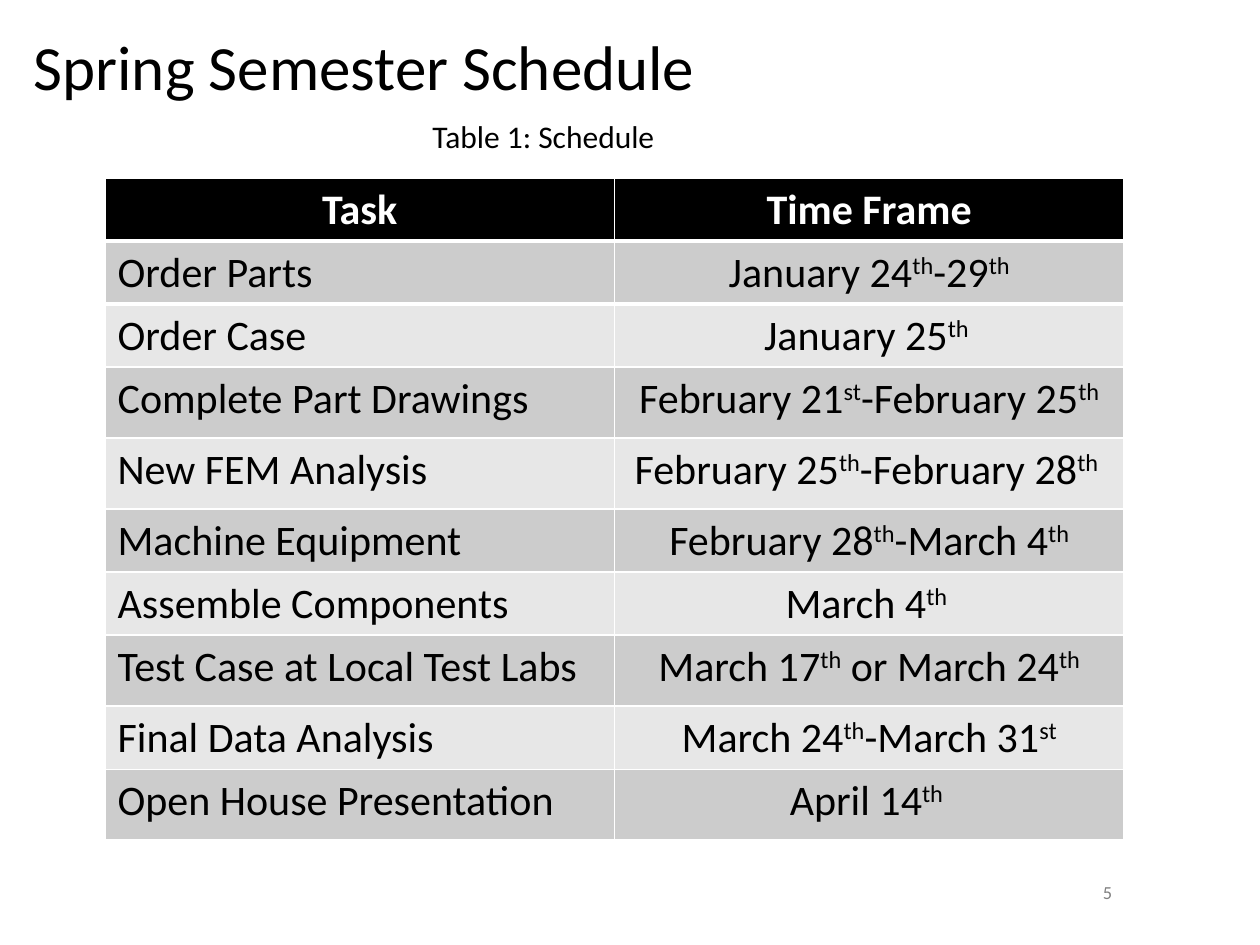
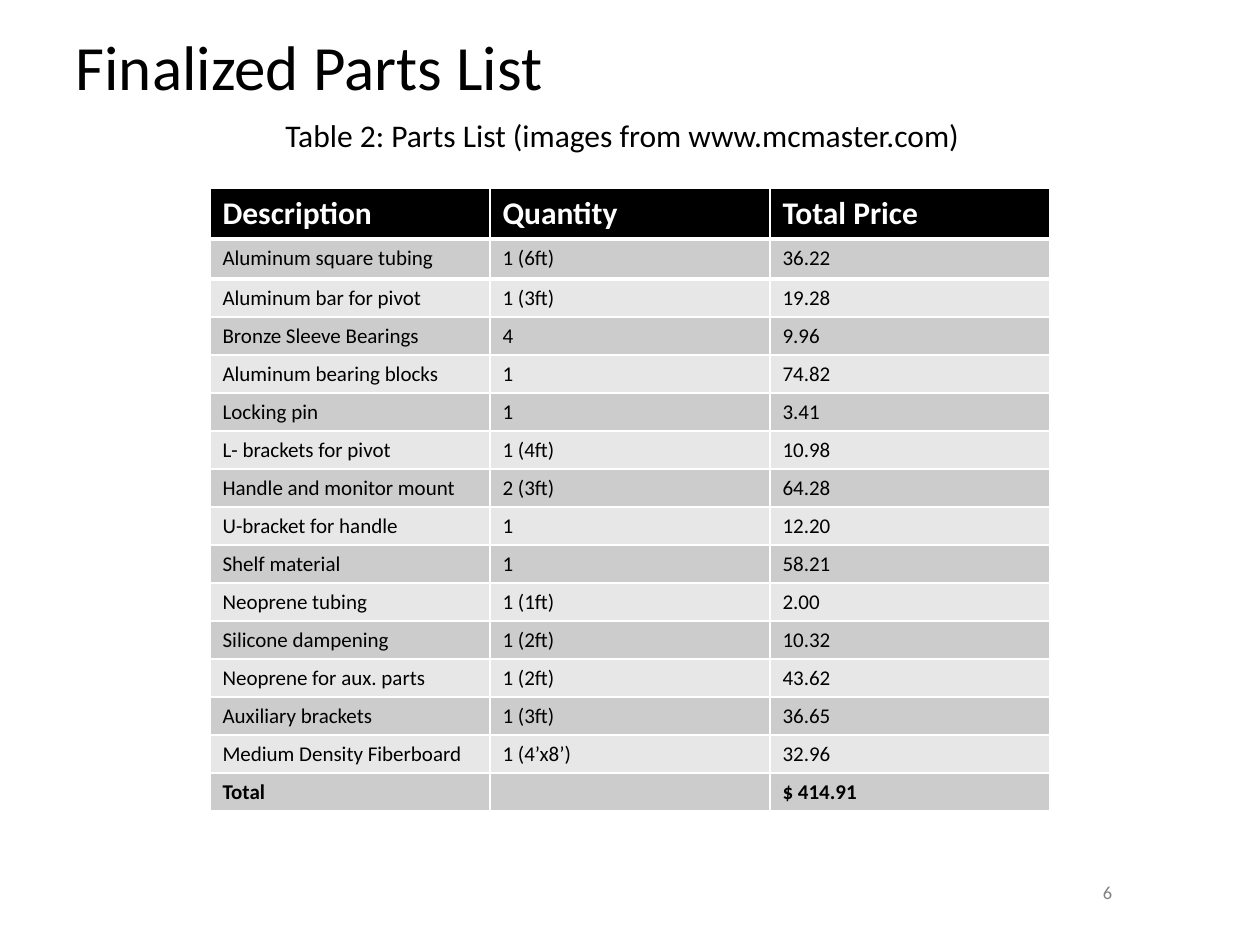
from dataclasses import dataclass

from lxml import etree
from pptx import Presentation, util as u
from pptx.dml.color import RGBColor
from pptx.enum import text as t
from pptx.oxml import ns

LEFT, CENTER = t.PP_ALIGN.LEFT, t.PP_ALIGN.CENTER


@dataclass(frozen=True)
class Theme:
    font: str = "Calibri"
    ink: str = "000000"
    header_ink: str = "FFFFFF"
    header_fill: str = "000000"
    header_rule: str = "FFFFFF"
    header_rule_width: float = 3
    bands: tuple = ("CCCCCC", "E7E7E7")
    number_ink: str = "808080"
    title_size: float = 36
    caption_size: float = 18
    number_size: float = 10.5


THEME = Theme()
NUMBER_BOX = (1071, 881, 73, 22)

SCHEDULE = [
    ("Task", "Time Frame"),
    ("Order Parts", "January 24^th^-29^th"),
    ("Order Case", "January 25^th "),
    ("Complete Part Drawings", "February 21^st^-February 25^th"),
    ("New FEM Analysis", "February 25^th^-February 28^th "),
    ("Machine Equipment", "February 28^th^-March 4^th"),
    ("Assemble Components", "March 4^th "),
    ("Test Case at Local Test Labs", "March 17^th^ or March 24^th"),
    ("Final Data Analysis", "March 24^th^-March 31^st"),
    ("Open House Presentation", "April 14^th "),
]
SCHEDULE_HEIGHTS = [63, 63, 63, 71, 71, 63, 63, 71, 63, 71]

PARTS = [
    ("Description", "Quantity", "Total Price"),
    ("Aluminum square tubing", "1 (6ft)", "36.22"),
    ("Aluminum bar for pivot", "1 (3ft)", "19.28"),
    ("Bronze Sleeve Bearings", "4", "9.96"),
    ("Aluminum bearing blocks", "1", "74.82"),
    ("Locking pin", "1", "3.41"),
    ("L- brackets for pivot", "1 (4ft)", "10.98"),
    ("Handle and monitor mount", "2 (3ft)", "64.28"),
    ("U-bracket for handle", "1", "12.20"),
    ("Shelf material", "1", "58.21"),
    ("Neoprene tubing", "1 (1ft)", "2.00"),
    ("Silicone dampening", "1 (2ft)", "10.32"),
    ("Neoprene for aux. parts", "1 (2ft)", "43.62"),
    ("Auxiliary brackets", "1 (3ft)", "36.65"),
    ("Medium Density Fiberboard", "1 (4’x8’)", "32.96"),
    ("Total", "", "$ 414.91"),
]
PARTS_HEIGHTS = [51, 40] + [38] * 14


def px(length):
    return u.Emu(round(length * 914400 / 126))


def write(paragraph, wording, size, color, bold=False, align=LEFT):
    for index, part in enumerate(wording.split("^")):
        if part:
            run = paragraph.add_run()
            run.text = part
            if index % 2:
                run.font._element.set("baseline", "30000")
    if not wording:
        etree.SubElement(paragraph._p, ns.qn("a:endParaRPr"), sz=str(size * 100))
    paragraph.alignment = align
    font = paragraph.font
    font.name, font.size, font.bold = THEME.font, u.Pt(size), bold
    font.color.rgb = RGBColor.from_string(color)


def add_title(slide, box, wording):
    title = slide.shapes.title
    title.left, title.top, title.width, title.height = map(px, box)
    frame = title.text_frame
    frame.auto_size = t.MSO_AUTO_SIZE.NONE
    frame.vertical_anchor = t.MSO_ANCHOR.TOP
    write(frame.paragraphs[0], wording, THEME.title_size, THEME.ink)


def add_label(slide, box, wording, size, color, align=LEFT, anchor=t.MSO_ANCHOR.TOP):
    frame = slide.shapes.add_textbox(*map(px, box)).text_frame
    frame.word_wrap = True
    frame.vertical_anchor = anchor
    write(frame.paragraphs[0], wording, size, color, align=align)


def rule_cell(cell, edge):
    line = etree.Element(ns.qn(f"a:{edge}"), w=str(u.Pt(THEME.header_rule_width)))
    fill = etree.SubElement(line, ns.qn("a:solidFill"))
    etree.SubElement(fill, ns.qn("a:srgbClr"), val=THEME.header_rule)
    cell._tc.get_or_add_tcPr().insert(0, line)


def add_banded_table(slide, box, rows, heights, sizes, aligns, header_align, bold_last=False):
    left, top, width = box
    columns = len(rows[0])
    table = slide.shapes.add_table(
        len(rows), columns, px(left), px(top), px(width), px(sum(heights))
    ).table
    for column in table.columns:
        column.width = px(width / columns)
    header_size, body_size = sizes
    for r, (row, height) in enumerate(zip(rows, heights)):
        table.rows[r].height = px(height)
        header = r == 0
        fill = THEME.header_fill if header else THEME.bands[(r - 1) % 2]
        ink = THEME.header_ink if header else THEME.ink
        bold = header or (bold_last and r == len(rows) - 1)
        for c, wording in enumerate(row):
            cell = table.cell(r, c)
            cell.fill.solid()
            cell.fill.fore_color.rgb = RGBColor.from_string(fill)
            if r < 2:
                rule_cell(cell, "lnB" if header else "lnT")
            write(cell.text_frame.paragraphs[0], wording,
                  header_size if header else body_size, ink, bold,
                  header_align if header else aligns[c])


def add_table_slide(deck, number, title, title_left, caption, caption_box, **table):
    slide = deck.slides.add_slide(deck.slide_layouts[5])
    add_title(slide, (title_left, 21, 1166, 89), title)
    add_label(slide, caption_box, caption, THEME.caption_size, THEME.ink)
    add_banded_table(slide, **table)
    add_label(slide, NUMBER_BOX, str(number), THEME.number_size, THEME.number_ink,
              CENTER, t.MSO_ANCHOR.MIDDLE)


def main():
    deck = Presentation()
    deck.slide_width, deck.slide_height = px(1260), px(945)
    add_table_slide(
        deck, 5, "Spring Semester Schedule", 21,
        "Table 1: Schedule", (420, 111, 735, 50),
        box=(105, 178, 1019), rows=SCHEDULE, heights=SCHEDULE_HEIGHTS,
        sizes=(24, 24), aligns=(LEFT, CENTER), header_align=CENTER,
    )
    add_table_slide(
        deck, 6, "Finalized Parts List", 63,
        "Table 2: Parts List (images from www.mcmaster.com)", (273, 110, 735, 50),
        box=(210, 188, 840), rows=PARTS, heights=PARTS_HEIGHTS,
        sizes=(18, 12), aligns=(LEFT,) * 3, header_align=LEFT, bold_last=True,
    )
    deck.save("out.pptx")


if __name__ == "__main__":
    main()
